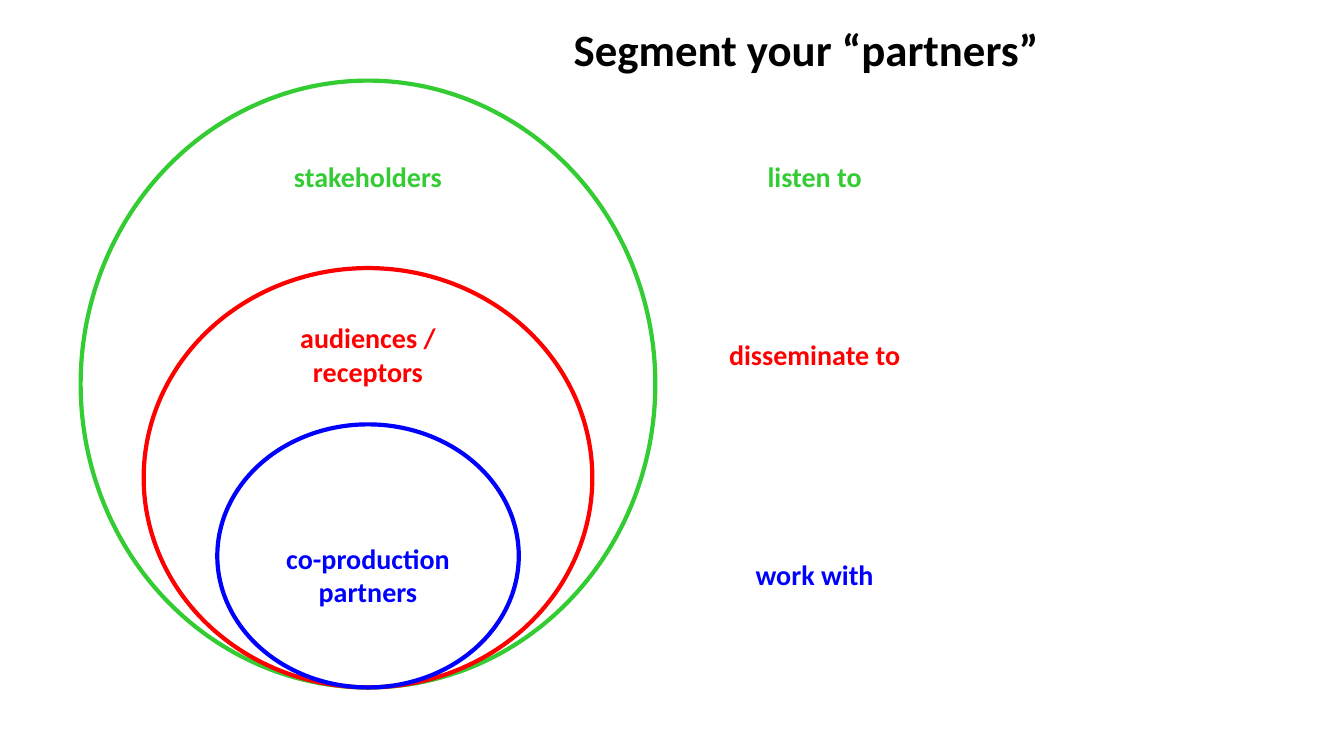
"""Build a slide of nested partner segments and how to engage each one."""
from dataclasses import dataclass

from pptx import Presentation
from pptx.dml.color import RGBColor
from pptx.enum.shapes import MSO_SHAPE
from pptx.enum.text import MSO_ANCHOR, MSO_AUTO_SIZE, PP_ALIGN
from pptx.util import Inches, Pt

OVAL = MSO_SHAPE.OVAL
TOP = MSO_ANCHOR.TOP
NO_FIT = MSO_AUTO_SIZE.NONE
FIT_SHAPE = MSO_AUTO_SIZE.SHAPE_TO_FIT_TEXT
LEFT, CENTER = PP_ALIGN.LEFT, PP_ALIGN.CENTER
TITLE_ONLY = 5


@dataclass(frozen=True)
class Theme:
    """Colours, font and sizes of the slide."""
    font: str = "Calibri"
    title_size: int = 32
    label_size: int = 20
    outline: int = 3
    ink: str = "000000"
    green: str = "33CC33"
    red: str = "FF0000"
    blue: str = "0000FF"


class SegmentSlide:
    """Draw the elements of one slide in one theme."""

    def __init__(self, page, theme):
        """Keep the slide and its theme."""
        self.page = page
        self.theme = theme

    def fill_text(self, box, text, size, color, align, fit):
        """Fill a box with one formatted paragraph."""
        frame = box.text_frame
        frame_format = {"word_wrap": True, "auto_size": fit, "vertical_anchor": TOP}
        for name, value in frame_format.items():
            setattr(frame, name, value)
        para = frame.paragraphs[0]
        para.alignment = align
        span = para.add_run()
        span.text = text
        font_format = {"name": self.theme.font, "size": Pt(size), "bold": True}
        for name, value in font_format.items():
            setattr(span.font, name, value)
        span.font.color.rgb = RGBColor.from_string(color)

    def title(self, text, left, top, width, height):
        """Place and fill the title placeholder."""
        box = self.page.shapes.title
        place = {"left": left, "top": top, "width": width, "height": height}
        for name, value in place.items():
            setattr(box, name, Inches(value))
        self.fill_text(box, text, self.theme.title_size, self.theme.ink, LEFT, NO_FIT)

    def ring(self, center, bottom, width, height, color):
        """Draw an outlined ellipse standing on a common base."""
        oval = self.page.shapes.add_shape(
            OVAL, Inches(center - width / 2), Inches(bottom - height),
            Inches(width), Inches(height))
        oval.shadow.inherit = False
        oval.fill.background()
        oval.line.color.rgb = RGBColor.from_string(color)
        oval.line.width = Pt(self.theme.outline)

    def label(self, text, center, top, height, color):
        """Add a centred label."""
        width = 2.23
        box = self.page.shapes.add_textbox(
            Inches(center - width / 2), Inches(top), Inches(width), Inches(height))
        self.fill_text(box, text, self.theme.label_size, color, CENTER, FIT_SHAPE)


def main():
    """Build and save the slide."""
    deck = Presentation()
    deck.slide_width, deck.slide_height = Inches(13.33), Inches(7.5)
    theme = Theme()
    page = deck.slides.add_slide(deck.slide_layouts[TITLE_ONLY])
    slide = SegmentSlide(page, theme)

    ring_center, ring_bottom, action_center = 3.65, 6.82, 8.08
    one_line, two_lines = 0.44, 0.77
    rings = [
        (5.7, 6.02, theme.green),
        (4.45, 4.16, theme.red),
        (2.99, 2.61, theme.blue),
    ]
    segments = [
        ("co-production partners", 5.32, two_lines, "work with", 5.48, theme.blue),
        ("audiences / receptors", 3.13, two_lines, "disseminate to", 3.3, theme.red),
        ("stakeholders", 1.53, one_line, "listen to", 1.53, theme.green),
    ]

    slide.title("Segment your “partners”", 5.59, 0.17, 5.53, 0.64)
    for width, height, color in rings:
        slide.ring(ring_center, ring_bottom, width, height, color)
    for group, group_top, group_height, action, action_top, color in segments:
        slide.label(group, ring_center, group_top, group_height, color)
        slide.label(action, action_center, action_top, one_line, color)
    deck.save("out.pptx")


if __name__ == "__main__":
    main()
